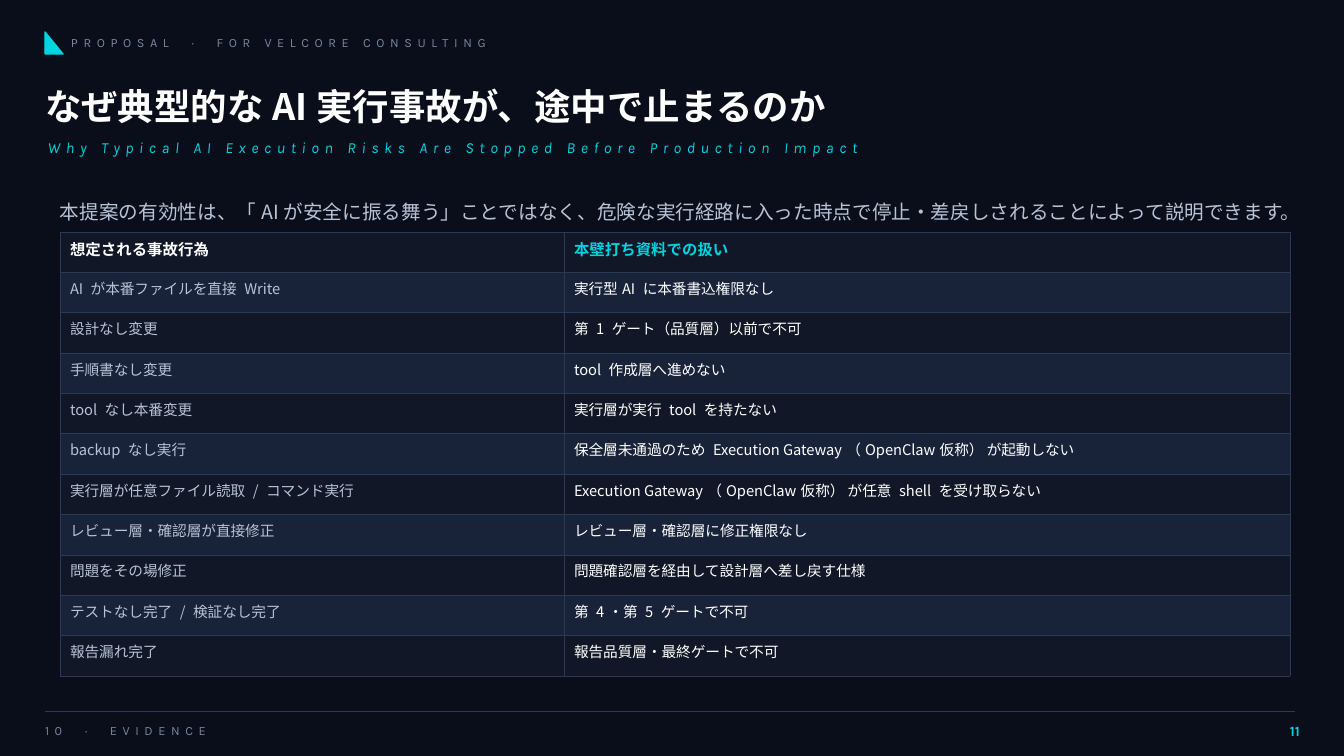
from lxml import etree
from pptx import Presentation, util as u
from pptx.dml.color import RGBColor
from pptx.enum import shapes, text
from pptx.oxml.ns import qn

# Content
EYEBROW = "PROPOSAL  ·  FOR VELCORE CONSULTING"
TITLE = "なぜ典型的なAI実行事故が、途中で止まるのか"
SUBTITLE = "Why Typical AI Execution Risks Are Stopped Before Production Impact"
LEAD = ("本提案の有効性は、「AIが安全に振る舞う」ことではなく、"
        "危険な実行経路に入った時点で停止・差戻しされることによって説明できます。")
HEADINGS = ("想定される事故行為", "本壁打ち資料での扱い")
INCIDENTS = [
    ("AI が本番ファイルを直接 Write", "実行型AI に本番書込権限なし"),
    ("設計なし変更", "第 1 ゲート（品質層）以前で不可"),
    ("手順書なし変更", "tool 作成層へ進めない"),
    ("tool なし本番変更", "実行層が実行 tool を持たない"),
    ("backup なし実行", "保全層未通過のため Execution Gateway（OpenClaw仮称） が起動しない"),
    ("実行層が任意ファイル読取 / コマンド実行",
     "Execution Gateway（OpenClaw仮称） が任意 shell を受け取らない"),
    ("レビュー層・確認層が直接修正", "レビュー層・確認層に修正権限なし"),
    ("問題をその場修正", "問題確認層を経由して設計層へ差し戻す仕様"),
    ("テストなし完了 / 検証なし完了", "第 4・第 5 ゲートで不可"),
    ("報告漏れ完了", "報告品質層・最終ゲートで不可"),
]
SECTION = "10  ·  EVIDENCE"
PAGE = "11"

# Look
LATIN, JAPANESE = "Karla", "Noto Sans CJK JP"
NIGHT, CYAN, WHITE = "0A0E1A", "00D4E0", "FFFFFF"
SLATE, MIST, RULE = "7787A0", "B7C3D6", "2A3A55"
ROW_FILLS = ("111726", "182238")
SLIDE_W, SLIDE_H = 1344, 756
MARGIN = 45
TABLE_X, TABLE_Y, TABLE_H = 60, 232, 444
COLUMNS = (504, 726)


def px(n):
    return u.Emu(round(n * 914400 / 100.8))


def rgb(value):
    return RGBColor.from_string(value)


def write(frame, words, size, color, font=JAPANESE, bold=False, italic=False,
          spacing=0, align=text.PP_ALIGN.LEFT):
    paragraph = frame.paragraphs[0]
    paragraph.alignment = align
    run = paragraph.add_run()
    run.text = words
    run.font.size = u.Pt(size)
    run.font.bold = bold
    run.font.italic = italic
    run.font.color.rgb = rgb(color)
    run.font.name = font
    props = run.font._element
    etree.SubElement(props, qn("a:ea")).set("typeface", font)
    if spacing:
        props.set("spc", str(spacing * 100))


def place(box, words, x, y, w, h, **style):
    box.left, box.top, box.width, box.height = map(px, (x, y, w, h))
    frame = box.text_frame
    frame.word_wrap = True
    frame.auto_size = text.MSO_AUTO_SIZE.NONE
    frame.vertical_anchor = text.MSO_ANCHOR.MIDDLE
    frame.margin_left = frame.margin_right = frame.margin_top = frame.margin_bottom = 0
    write(frame, words, **style)


def label(words, *area, **style):
    place(slide.shapes.add_textbox(0, 0, 0, 0), words, *area, **style)


def outline(cell, color, width):
    props = cell._tc.get_or_add_tcPr()
    for position, side in enumerate(("a:lnL", "a:lnR", "a:lnT", "a:lnB")):
        edge = etree.Element(qn(side), w=str(u.Pt(width)))
        fill = etree.SubElement(edge, qn("a:solidFill"))
        etree.SubElement(fill, qn("a:srgbClr"), val=color)
        props.insert(position, edge)


deck = Presentation()
deck.slide_width, deck.slide_height = px(SLIDE_W), px(SLIDE_H)
slide = deck.slides.add_slide(deck.slide_layouts[5])
slide.background.fill.solid()
slide.background.fill.fore_color.rgb = rgb(NIGHT)

# Header
marker = slide.shapes.add_shape(shapes.MSO_SHAPE.RIGHT_TRIANGLE,
                                px(MARGIN), px(32), px(18), px(22))
marker.shadow.inherit = False
marker.fill.solid()
marker.fill.fore_color.rgb = marker.line.color.rgb = rgb(CYAN)
marker.line.width = u.Pt(1)
label(EYEBROW, 71, 27, 605, 32, size=9, color=SLATE, font=LATIN, spacing=4)
place(slide.shapes.title, TITLE, MARGIN, 76, 1210, 60, size=26, color=WHITE, bold=True)
label(SUBTITLE, 48, 131, 1210, 32, size=11, color=CYAN, font=LATIN, italic=True, spacing=4)
label(LEAD, TABLE_X, 186, sum(COLUMNS), 51, size=14, color=MIST)

# Incident table
rows = [HEADINGS] + INCIDENTS
table = slide.shapes.add_table(len(rows), len(COLUMNS), px(TABLE_X), px(TABLE_Y),
                               px(sum(COLUMNS)), px(TABLE_H)).table
table.first_row = table.horz_banding = False
for column, width in zip(table.columns, COLUMNS):
    column.width = px(width)
for r, row in enumerate(rows):
    table.rows[r].height = px(TABLE_H / len(rows))
    heading = r == 0
    colors = (WHITE, CYAN) if heading else (MIST, WHITE)
    for c, words in enumerate(row):
        cell = table.cell(r, c)
        cell.fill.solid()
        cell.fill.fore_color.rgb = rgb(ROW_FILLS[r % 2])
        outline(cell, RULE, 0.5)
        write(cell.text_frame, words, size=11 if heading else 10.5,
              color=colors[c], bold=heading)

# Footer
footer_rule = slide.shapes.add_connector(shapes.MSO_CONNECTOR.STRAIGHT, px(MARGIN), px(711),
                                         px(1295), px(711))
footer_rule.line.color.rgb = rgb(RULE)
footer_rule.line.width = u.Pt(0.6)
etree.SubElement(footer_rule._element.spPr, qn("a:effectLst"))
label(SECTION, MARGIN, 716, 907, 30, size=9, color=SLATE, font=LATIN, spacing=4)
label(PAGE, 1255, 716, 45, 30, size=10, color=CYAN, font=LATIN, bold=True,
      align=text.PP_ALIGN.RIGHT)

deck.save("out.pptx")
